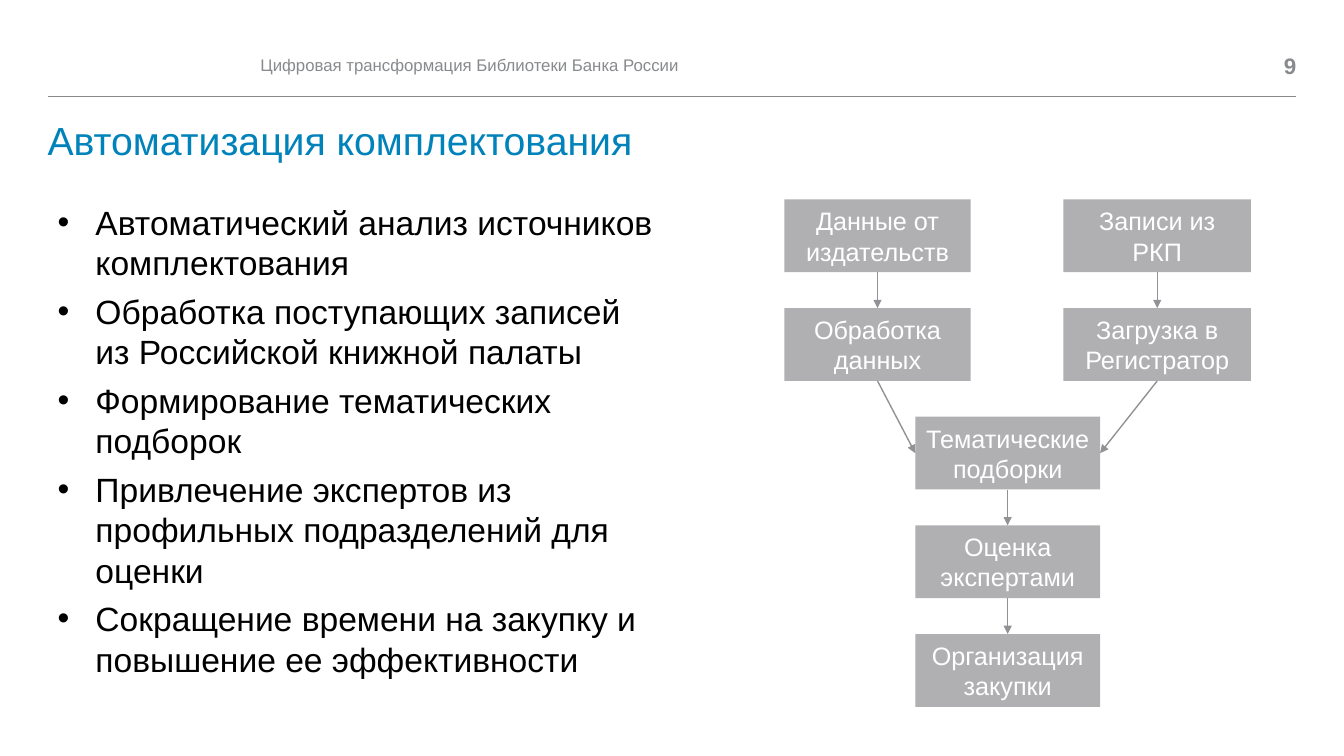
import pptx
import pptx.dml.color
import pptx.enum.shapes
import pptx.enum.text
import pptx.oxml.ns
import pptx.util
from lxml import etree

Pt = pptx.util.Pt
ALIGN = pptx.enum.text.PP_ALIGN
ANCHOR = pptx.enum.text.MSO_ANCHOR
qn = pptx.oxml.ns.qn

COLORS = {
    "title": "0082BB",
    "header": "888A8D",
    "body": "000000",
    "box": "B0B0B3",
    "box_text": "FFFFFF",
    "arrow": "929296",
}


def rgb(name):
    return pptx.dml.color.RGBColor.from_string(COLORS[name])


def write_text(frame, texts, size, color, bold=False, align=ALIGN.LEFT, anchor=ANCHOR.TOP,
               insets=(7.2, 3.6), line_spacing=1.0, space_after=0, bullet=None, indent=0):
    frame.word_wrap = True
    frame.auto_size = pptx.enum.text.MSO_AUTO_SIZE.NONE
    frame.vertical_anchor = anchor
    frame.margin_left = frame.margin_right = Pt(insets[0])
    frame.margin_top = frame.margin_bottom = Pt(insets[1])
    for index, text in enumerate(texts):
        paragraph = frame.add_paragraph() if index else frame.paragraphs[0]
        if bullet:
            properties = paragraph._p.get_or_add_pPr()
            properties.set("marL", str(Pt(indent)))
            properties.set("indent", str(-Pt(indent)))
            etree.SubElement(properties, qn("a:buFont")).set("typeface", "Arial")
            etree.SubElement(properties, qn("a:buChar")).set("char", bullet)
        paragraph.alignment = align
        paragraph.line_spacing = line_spacing
        paragraph.space_before = Pt(0)
        paragraph.space_after = Pt(space_after)
        run = paragraph.add_run()
        run.text = text
        run.font.name = "Arial"
        run.font.size = Pt(size)
        run.font.bold = bold
        run.font.color.rgb = rgb(color)


presentation = pptx.Presentation()
presentation.slide_width = Pt(960)
presentation.slide_height = Pt(540)
slide = presentation.slides.add_slide(presentation.slide_layouts[1])
shapes = slide.shapes

# Title and bullet list
title, body = slide.placeholders
title.left, title.top, title.width, title.height = Pt(34), Pt(87), Pt(892), Pt(47.5)
write_text(title.text_frame, ["Автоматизация комплектования"], size=28, color="title",
           insets=(0, 0), line_spacing=0.9)

body.left, body.top, body.width, body.height = Pt(34), Pt(140.4), Pt(445.7), Pt(351.4)
write_text(body.text_frame, [
    "Автоматический анализ источников комплектования",
    "Обработка поступающих записей из Российской книжной палаты",
    "Формирование тематических подборок",
    "Привлечение экспертов из профильных подразделений для оценки",
    "Сокращение времени на закупку и повышение ее эффективности",
], size=24, color="body", space_after=6, bullet="•", indent=27)

# Running header and slide number
header = shapes.add_textbox(Pt(186), Pt(34), Pt(664), Pt(25))
write_text(header.text_frame, ["Цифровая трансформация Библиотеки Банка России"],
           size=12, color="header", anchor=ANCHOR.MIDDLE, insets=(0, 0))
number = shapes.add_textbox(Pt(868), Pt(34), Pt(58), Pt(25))
write_text(number.text_frame, ["9"], size=16, color="header", bold=True,
           align=ALIGN.RIGHT, anchor=ANCHOR.MIDDLE, insets=(0, 0))

# Flowchart boxes: column gives left and width, row gives top
COLUMNS = {"left": (560.2, 133.2), "middle": (653.8, 132), "right": (759.6, 134)}
ROW_TOP, ROW_STEP, BOX_HEIGHT = 142.5, 77.6, 52
BOXES = {
    ("left", 0): "Данные от издательств",
    ("right", 0): "Записи из РКП",
    ("left", 1): "Обработка данных",
    ("right", 1): "Загрузка в Регистратор",
    ("middle", 2): "Тематические подборки",
    ("middle", 3): "Оценка экспертами",
    ("middle", 4): "Организация закупки",
}
boxes = {}
for (column, row), text in BOXES.items():
    left, width = COLUMNS[column]
    box = shapes.add_shape(pptx.enum.shapes.MSO_SHAPE.RECTANGLE, Pt(left),
                           Pt(ROW_TOP + row * ROW_STEP), Pt(width), Pt(BOX_HEIGHT))
    box.shadow.inherit = False
    box.fill.solid()
    box.fill.fore_color.rgb = rgb("box")
    box.line.fill.background()
    write_text(box.text_frame, [text], size=18, color="box_text",
               align=ALIGN.CENTER, anchor=ANCHOR.MIDDLE)
    boxes[column, row] = box

# Header rule and arrows: each arrow leaves a box at the bottom
TOP, LEFT, BOTTOM, RIGHT = range(4)
ARROWS = [
    (("left", 0), ("left", 1), TOP),
    (("right", 0), ("right", 1), TOP),
    (("left", 1), ("middle", 2), LEFT),
    (("right", 1), ("middle", 2), RIGHT),
    (("middle", 2), ("middle", 3), TOP),
    (("middle", 3), ("middle", 4), TOP),
]
STRAIGHT = pptx.enum.shapes.MSO_CONNECTOR.STRAIGHT
rule = shapes.add_connector(STRAIGHT, Pt(34), Pt(68.5), Pt(926), Pt(68.5))
rule.line.color.rgb = rgb("header")
rule.line.width = Pt(0.5)
connectors = [rule]
for source, target, side in ARROWS:
    arrow = shapes.add_connector(STRAIGHT, 0, 0, 0, 0)
    arrow.begin_connect(boxes[source], BOTTOM)
    arrow.end_connect(boxes[target], side)
    arrow.line.color.rgb = rgb("arrow")
    arrow.line.width = Pt(1)
    etree.SubElement(arrow.line._get_or_add_ln(), qn("a:tailEnd")).set("type", "triangle")
    connectors.append(arrow)
for connector in connectors:
    etree.SubElement(connector._element.spPr, qn("a:effectLst"))

presentation.save("out.pptx")
